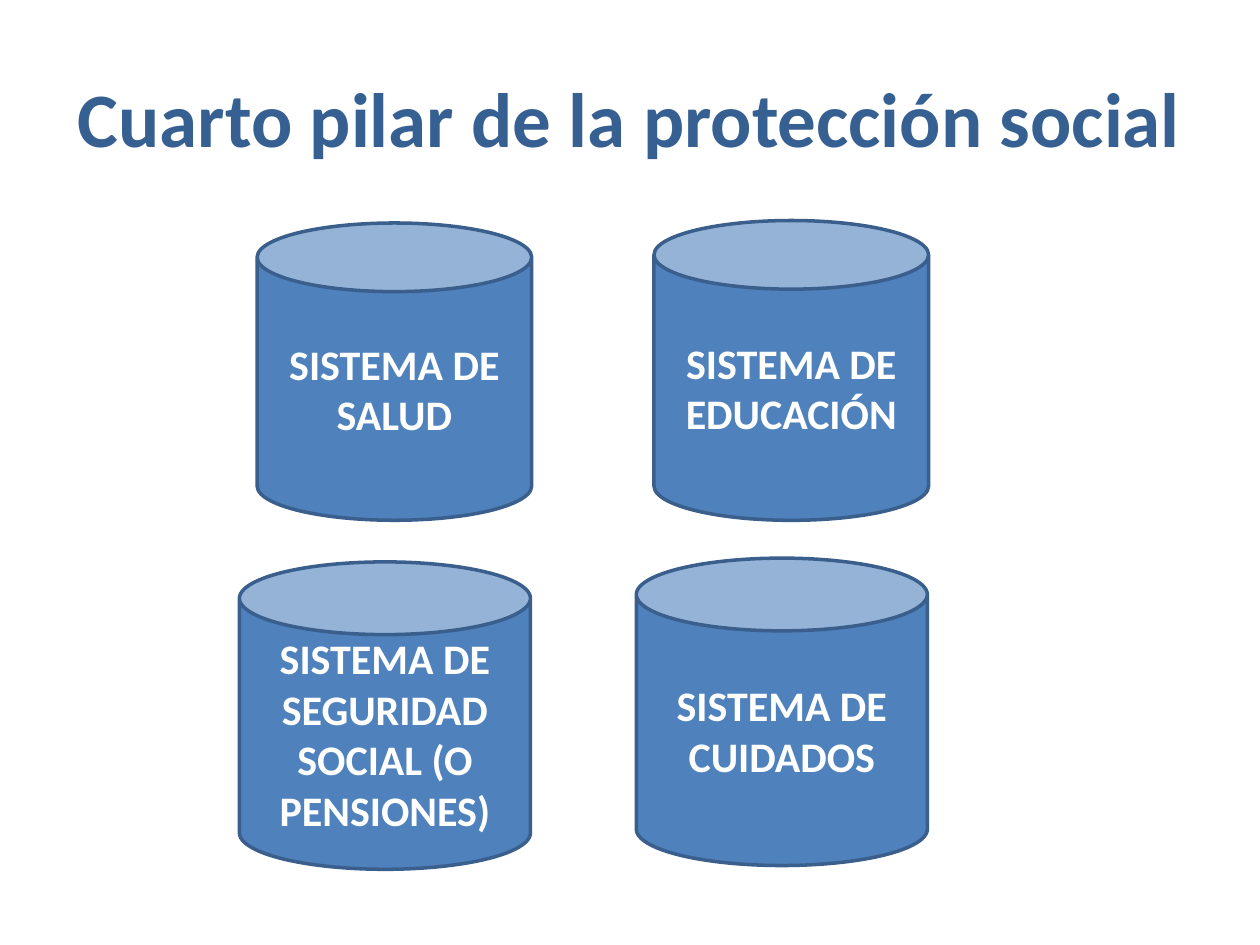
import pptx
import pptx.util
import pptx.dml.color
import pptx.enum.shapes
import pptx.enum.text
from pptx.util import Inches, Pt

RGBColor = pptx.dml.color.RGBColor
NAVY = RGBColor(0x37, 0x60, 0x92)
BLUE = RGBColor(0x4F, 0x81, 0xBD)
EDGE = RGBColor(0x3A, 0x5F, 0x8C)
WHITE = RGBColor(0xFF, 0xFF, 0xFF)


def write(shape, text, size, color):
    frame = shape.text_frame
    frame.text = text
    frame.word_wrap = True
    frame.vertical_anchor = pptx.enum.text.MSO_ANCHOR.MIDDLE
    para = frame.paragraphs[0]
    para.alignment = pptx.enum.text.PP_ALIGN.CENTER
    font = para.runs[0].font
    font.name = "Calibri"
    font.size = Pt(size)
    font.bold = True
    font.color.rgb = color


deck = pptx.Presentation()
deck.slide_width = Inches(10)
deck.slide_height = Inches(7.5)
slide = deck.slides.add_slide(deck.slide_layouts[5])

title = slide.shapes.title
title.left, title.top = Inches(0.5), Inches(0.3)
title.width, title.height = Inches(9), Inches(1.25)
write(title, "Cuarto pilar de la protección social", 44, NAVY)

pillars = [
    ("SISTEMA DE SALUD", 2.04, 1.77, 2.18, 2.36),
    ("SISTEMA DE EDUCACIÓN", 5.19, 1.75, 2.18, 2.38),
    ("SISTEMA DE SEGURIDAD SOCIAL (O PENSIONES)", 1.9, 4.46, 2.31, 2.44),
    ("SISTEMA DE CUIDADOS", 5.05, 4.43, 2.31, 2.44),
]
for text, *box in pillars:
    can = slide.shapes.add_shape(
        pptx.enum.shapes.MSO_SHAPE.CAN, *[Inches(n) for n in box])
    can.shadow.inherit = False
    can.fill.solid()
    can.fill.fore_color.rgb = BLUE
    can.line.color.rgb = EDGE
    can.line.width = Pt(2)
    write(can, text, 24, WHITE)

deck.save("out.pptx")
